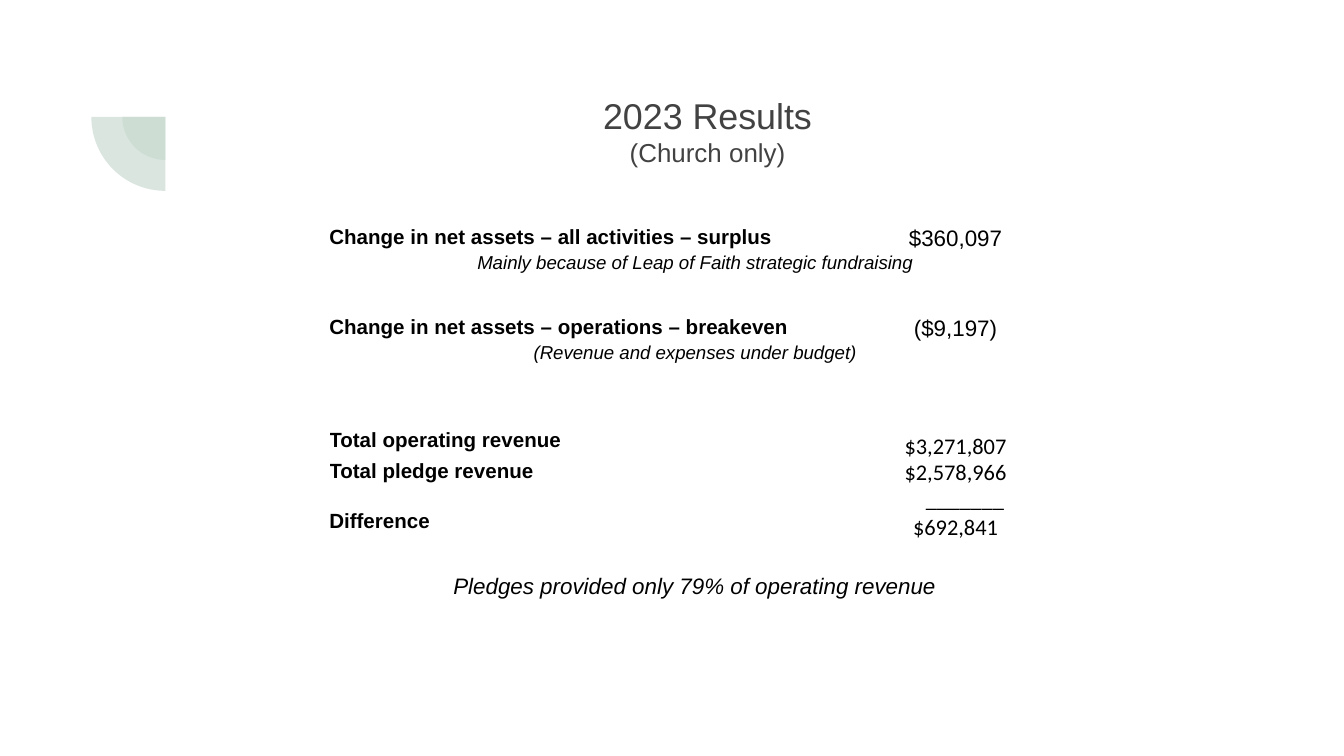
import math

import pptx
import pptx.dml.color
import pptx.enum.text
import pptx.oxml.ns
import pptx.util
from lxml import etree

Inches = pptx.util.Inches
Pt = pptx.util.Pt
CENTER = pptx.enum.text.PP_ALIGN.CENTER

COLORS = {"sage": "C9DBD1", "title": "424242", "text": "000000"}


def rgb(name):
    return pptx.dml.color.RGBColor.from_string(COLORS[name])


def style(p, size, font="Arial", color="text", bold=False, italic=False):
    p.font.size = Pt(size)
    p.font.name = font
    p.font.color.rgb = rgb(color)
    p.font.bold = bold
    p.font.italic = italic


def add_quarter(slide, corner_x, corner_y, radius, steps=32):
    """Quarter disc below and to the left of its corner."""
    angles = [math.pi / 2 * (1 + i / steps) for i in range(steps + 1)]
    arc = [(Inches(corner_x + radius * math.cos(a)),
            Inches(corner_y + radius * math.sin(a))) for a in angles]
    builder = slide.shapes.build_freeform(Inches(corner_x), Inches(corner_y))
    builder.add_line_segments(arc, close=True)
    sp = builder.convert_to_shape()
    sp.shadow.inherit = False
    sp.fill.solid()
    sp.fill.fore_color.rgb = rgb("sage")
    sp.line.fill.background()
    clr = sp._element.spPr.find(".//" + pptx.oxml.ns.qn("a:srgbClr"))
    etree.SubElement(clr, pptx.oxml.ns.qn("a:alpha"), val="70000")


def add_title(slide, x, y, w, h):
    tf = slide.shapes.add_textbox(Inches(x), Inches(y), Inches(w), Inches(h)).text_frame
    tf.word_wrap = True
    tf.margin_left = tf.margin_right = tf.margin_top = tf.margin_bottom = Inches(0.1)
    lines = [("2023 Results", 19.2), ("(Church only)", 13.9)]
    for i, (text, size) in enumerate(lines):
        p = tf.add_paragraph() if i else tf.paragraphs[0]
        p.text = text
        p.alignment = CENTER
        style(p, size, color="title")


# Label, amount, amount font, row height, space above label, space above amount
LABEL_ROWS = {
    0: ("Change in net assets – all activities – surplus", "$360,097", "Arial", 0.19, 0, 0),
    2: ("Change in net assets – operations – breakeven", "($9,197)", "Arial", 0.19, 0, 0),
    4: ("Total operating revenue", "$3,271,807", "Calibri", 0.4, 0.17, 0.2),
    5: ("Total pledge revenue", "$2,578,966", "Calibri", 0.2, 0, 0),
    6: ("Difference", "_______\n$692,841", "Calibri", 0.65, 0.17, 0),
}
# Text, size of the notes that span both columns
NOTE_ROWS = {
    1: ("Mainly because of Leap of Faith strategic fundraising", 10),
    3: ("(Revenue and expenses under budget)", 10),
    7: ("Pledges provided only 79% of operating revenue", 12),
}


def fill_cell(cell, text, size, top=0, align=None, **font):
    cell.margin_top = Inches(top)
    cell.text_frame.text = text
    for p in cell.text_frame.paragraphs:
        p.alignment = align
        style(p, size, **font)


def add_results(slide, x, y, w, h):
    count = len(LABEL_ROWS) + len(NOTE_ROWS)
    table = slide.shapes.add_table(count, 2, Inches(x), Inches(y), Inches(w), Inches(h)).table
    table.first_row = table.horz_banding = False
    for column, width in zip(table.columns, (3.88, w - 3.88)):
        column.width = Inches(width)
    for cell in table.iter_cells():
        cell.fill.background()
        cell.margin_left = cell.margin_right = cell.margin_top = cell.margin_bottom = 0
        style(cell.text_frame.paragraphs[0], 10)

    # Labelled amounts
    for row, (label, amount, font, height, label_top, amount_top) in LABEL_ROWS.items():
        table.rows[row].height = Inches(height)
        fill_cell(table.cell(row, 0), label, 11, label_top, bold=True)
        fill_cell(table.cell(row, 1), amount, 12, amount_top, CENTER, font=font)
    # The sum rule sits slightly right of the amount
    rule = table.cell(6, 1).text_frame.paragraphs[0]
    rule._p.get_or_add_pPr().set("marL", str(Inches(0.14)))

    # Notes across both columns
    for row, (text, size) in NOTE_ROWS.items():
        table.rows[row].height = Inches(0.47)
        table.cell(row, 0).merge(table.cell(row, 1))
        fill_cell(table.cell(row, 0), text, size, align=CENTER, italic=True)


def main():
    prs = pptx.Presentation()
    prs.slide_width, prs.slide_height = Inches(10), Inches(10 * 9 / 16)
    slide = prs.slides.add_slide(prs.slide_layouts[6])
    for radius in (0.32, 0.55):
        add_quarter(slide, 1.23, 0.87, radius)
    add_title(slide, 1.42, 0.6, 7.69, 1.09)
    add_results(slide, 2.45, 1.68, 5.44, 3.04)
    prs.save("out.pptx")


if __name__ == "__main__":
    main()
